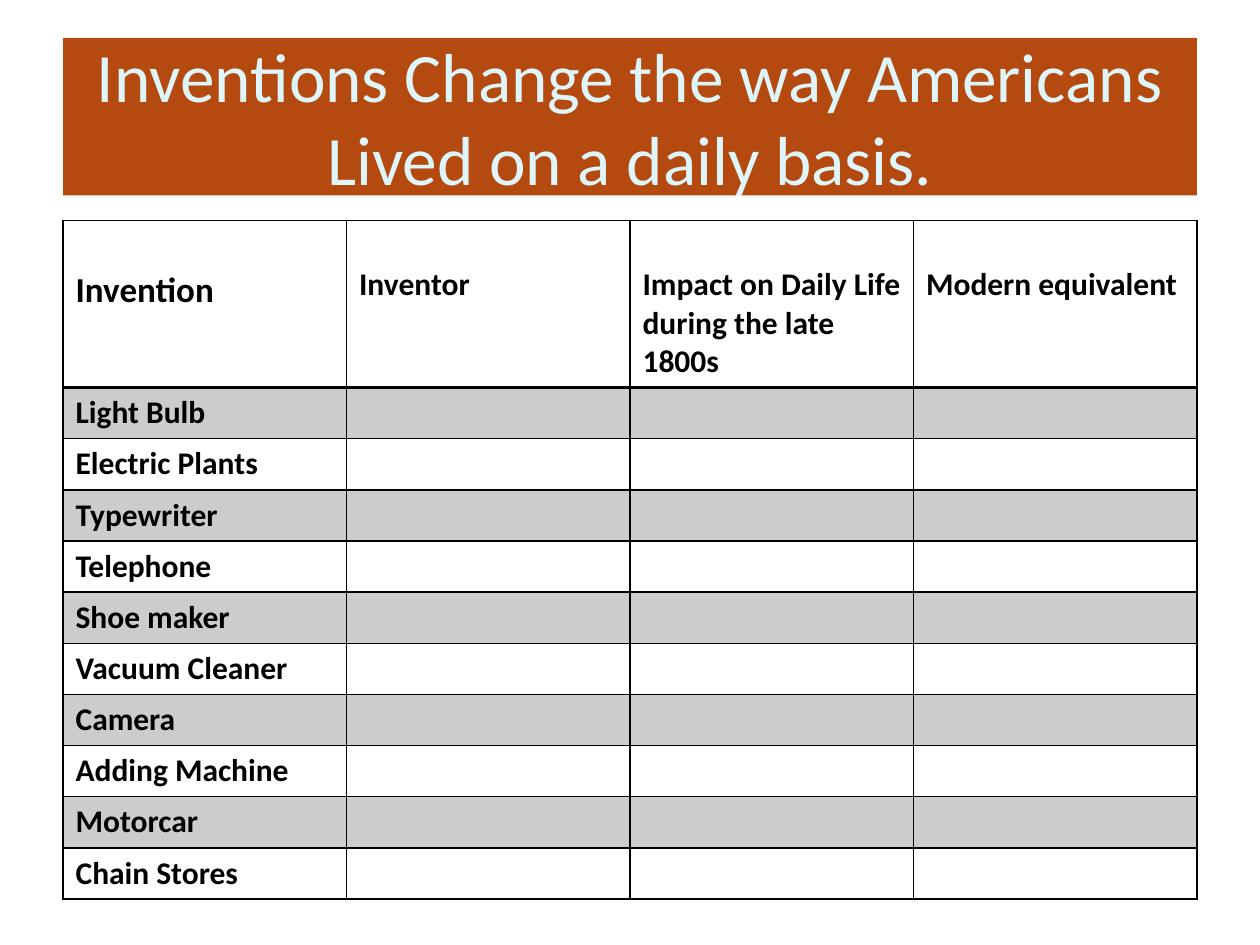
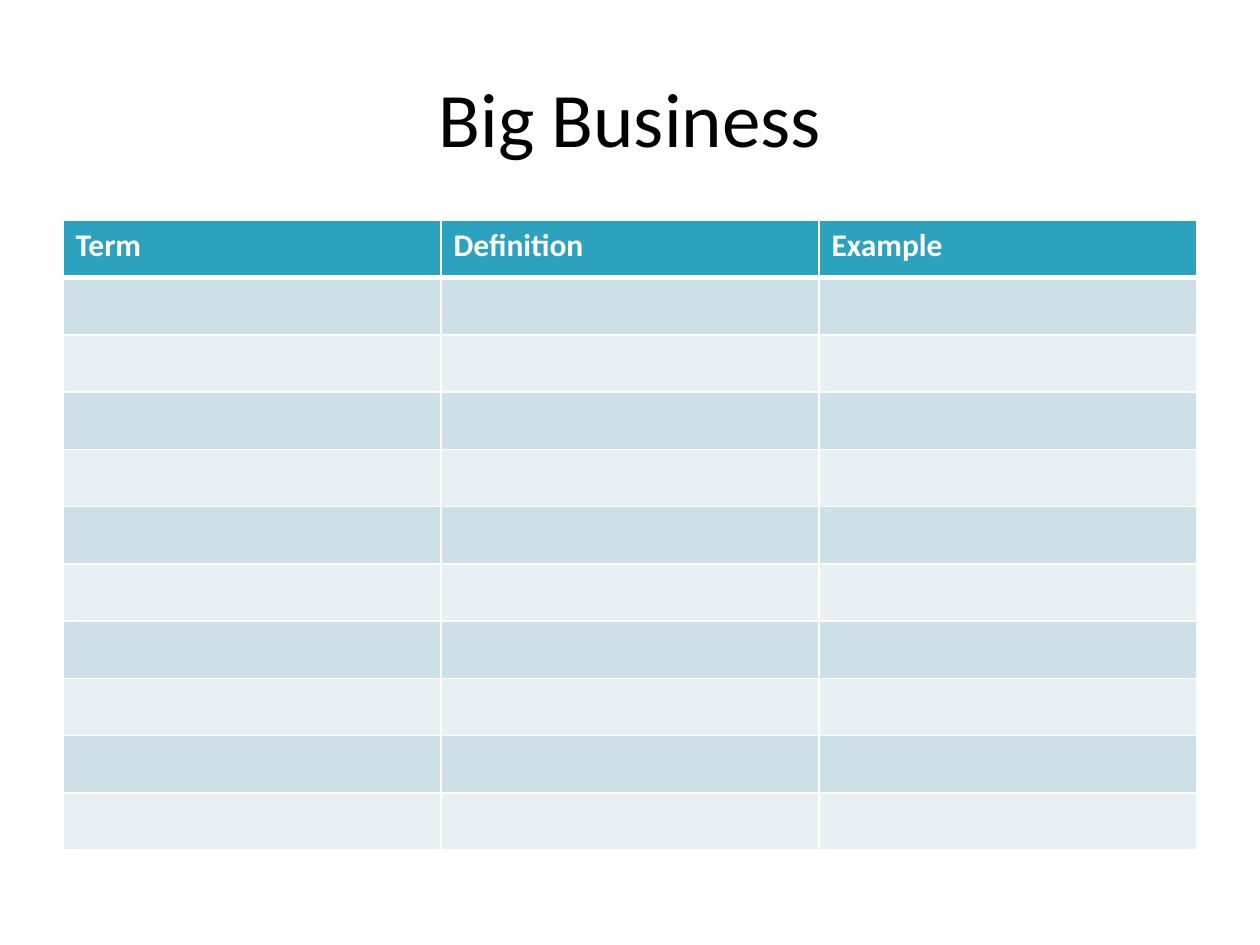
from dataclasses import dataclass

from lxml.etree import SubElement
from pptx import Presentation
from pptx.dml.color import RGBColor
from pptx.enum.text import MSO_ANCHOR, MSO_AUTO_SIZE, PP_ALIGN
from pptx.oxml.ns import qn
from pptx.presentation import Presentation as Deck
from pptx.slide import Slide
from pptx.table import _Cell as Cell
from pptx.util import Inches, Length, Pt

TITLE_ONLY = 5


@dataclass(frozen=True)
class Theme:
    font: str = "Calibri"
    black: str = "000000"
    white: str = "FFFFFF"
    rust: str = "B54A10"
    ice: str = "DEF5FA"
    gray: str = "CCCCCC"
    teal: str = "2DA2BF"
    blue_band: str = "CDE0E8"
    pale_band: str = "E8F0F4"
    title_size: float = 44
    long_title_size: float = 39.6
    lead_size: float = 20
    cell_size: float = 18
    border_width: float = 1


THEME = Theme()
LEFT, WIDTH = Inches(0.5), Inches(9)
TITLE_TOP, TITLE_HEIGHT = Inches(0.3), Inches(1.25)
TABLE_TOP = Inches(1.75)
CELL_MARGIN = Inches(0.05)


@dataclass(frozen=True)
class Title:
    text: str
    size: float
    color: str
    fill: str | None = None


@dataclass(frozen=True)
class HeaderCell:
    text: str
    size: float = THEME.cell_size
    top_margin: Length = CELL_MARGIN


@dataclass(frozen=True)
class Worksheet:
    title: Title
    headers: tuple[HeaderCell, ...]
    row_labels: tuple[str, ...]
    header_height: Length
    row_height: Length
    border_color: str
    rule_width: float
    header_color: str
    header_fill: str | None
    band_fills: tuple[str | None, str | None]


INVENTIONS = Worksheet(
    title=Title(
        "Inventions Change the way Americans Lived on a daily basis.",
        THEME.long_title_size,
        THEME.ice,
        THEME.rust,
    ),
    headers=(
        HeaderCell("Invention", THEME.lead_size, Inches(0.39)),
        HeaderCell("Inventor", top_margin=Inches(0.36)),
        HeaderCell("Impact on Daily Life during the late 1800s", top_margin=Inches(0.36)),
        HeaderCell("Modern equivalent", top_margin=Inches(0.36)),
    ),
    row_labels=(
        "Light Bulb",
        "Electric Plants",
        "Typewriter",
        "Telephone",
        "Shoe maker",
        "Vacuum Cleaner",
        "Camera",
        "Adding Machine",
        "Motorcar",
        "Chain Stores",
    ),
    header_height=Inches(1.32),
    row_height=Inches(4.06 / 10),
    border_color=THEME.black,
    rule_width=2,
    header_color=THEME.black,
    header_fill=None,
    band_fills=(THEME.gray, None),
)

BIG_BUSINESS = Worksheet(
    title=Title("Big Business", THEME.title_size, THEME.black),
    headers=(HeaderCell("Term"), HeaderCell("Definition"), HeaderCell("Example")),
    row_labels=("",) * 10,
    header_height=Inches(5 / 11),
    row_height=Inches(5 / 11),
    border_color=THEME.white,
    rule_width=3,
    header_color=THEME.white,
    header_fill=THEME.teal,
    band_fills=(THEME.blue_band, THEME.pale_band),
)


def add_title(slide: Slide, title: Title) -> None:
    shape = slide.shapes.title
    shape.left, shape.top = LEFT, TITLE_TOP
    shape.width, shape.height = WIDTH, TITLE_HEIGHT
    if title.fill:
        shape.fill.solid()
        shape.fill.fore_color.rgb = RGBColor.from_string(title.fill)
    frame = shape.text_frame
    frame.text = title.text
    frame.word_wrap = True
    frame.auto_size = MSO_AUTO_SIZE.NONE
    frame.vertical_anchor = MSO_ANCHOR.MIDDLE
    paragraph = frame.paragraphs[0]
    paragraph.alignment = PP_ALIGN.CENTER
    paragraph.font.name = THEME.font
    paragraph.font.size = Pt(title.size)
    paragraph.font.color.rgb = RGBColor.from_string(title.color)


def set_borders(cell: Cell, color: str, top: float, bottom: float) -> None:
    properties = cell._tc.get_or_add_tcPr()
    side = THEME.border_width
    for tag, width in (("lnL", side), ("lnR", side), ("lnT", top), ("lnB", bottom)):
        line = SubElement(properties, qn(f"a:{tag}"), w=str(Pt(width)))
        fill = SubElement(line, qn("a:solidFill"))
        SubElement(fill, qn("a:srgbClr"), val=color)


def set_fill(cell: Cell, color: str | None) -> None:
    if color is None:
        cell.fill.background()
    else:
        cell.fill.solid()
        cell.fill.fore_color.rgb = RGBColor.from_string(color)


def set_text(cell: Cell, text: str, size: float, color: str) -> None:
    cell.text = text
    font = cell.text_frame.paragraphs[0].font
    font.name = THEME.font
    font.size = Pt(size)
    font.bold = True
    font.color.rgb = RGBColor.from_string(color)


def add_table(slide: Slide, sheet: Worksheet) -> None:
    row_count, column_count = len(sheet.row_labels) + 1, len(sheet.headers)
    height = Length(sheet.header_height + sheet.row_height * len(sheet.row_labels))
    table = slide.shapes.add_table(
        row_count, column_count, LEFT, TABLE_TOP, WIDTH, height
    ).table
    for index, row in enumerate(table.rows):
        row.height = sheet.row_height if index else sheet.header_height
        top = sheet.rule_width if index == 1 else THEME.border_width
        bottom = THEME.border_width if index else sheet.rule_width
        fill = sheet.band_fills[(index - 1) % 2] if index else sheet.header_fill
        for cell in row.cells:
            set_borders(cell, sheet.border_color, top, bottom)
            set_fill(cell, fill)
    for column, header in enumerate(sheet.headers):
        cell = table.cell(0, column)
        cell.margin_top = header.top_margin
        set_text(cell, header.text, header.size, sheet.header_color)
    for index, label in enumerate(sheet.row_labels, start=1):
        if label:
            set_text(table.cell(index, 0), label, THEME.cell_size, THEME.black)


def add_worksheet(presentation: Deck, sheet: Worksheet) -> None:
    slide = presentation.slides.add_slide(presentation.slide_layouts[TITLE_ONLY])
    add_title(slide, sheet.title)
    add_table(slide, sheet)


def main() -> None:
    presentation = Presentation()
    presentation.slide_width, presentation.slide_height = Inches(10), Inches(7.5)
    for sheet in (INVENTIONS, BIG_BUSINESS):
        add_worksheet(presentation, sheet)
    presentation.save("out.pptx")


if __name__ == "__main__":
    main()
